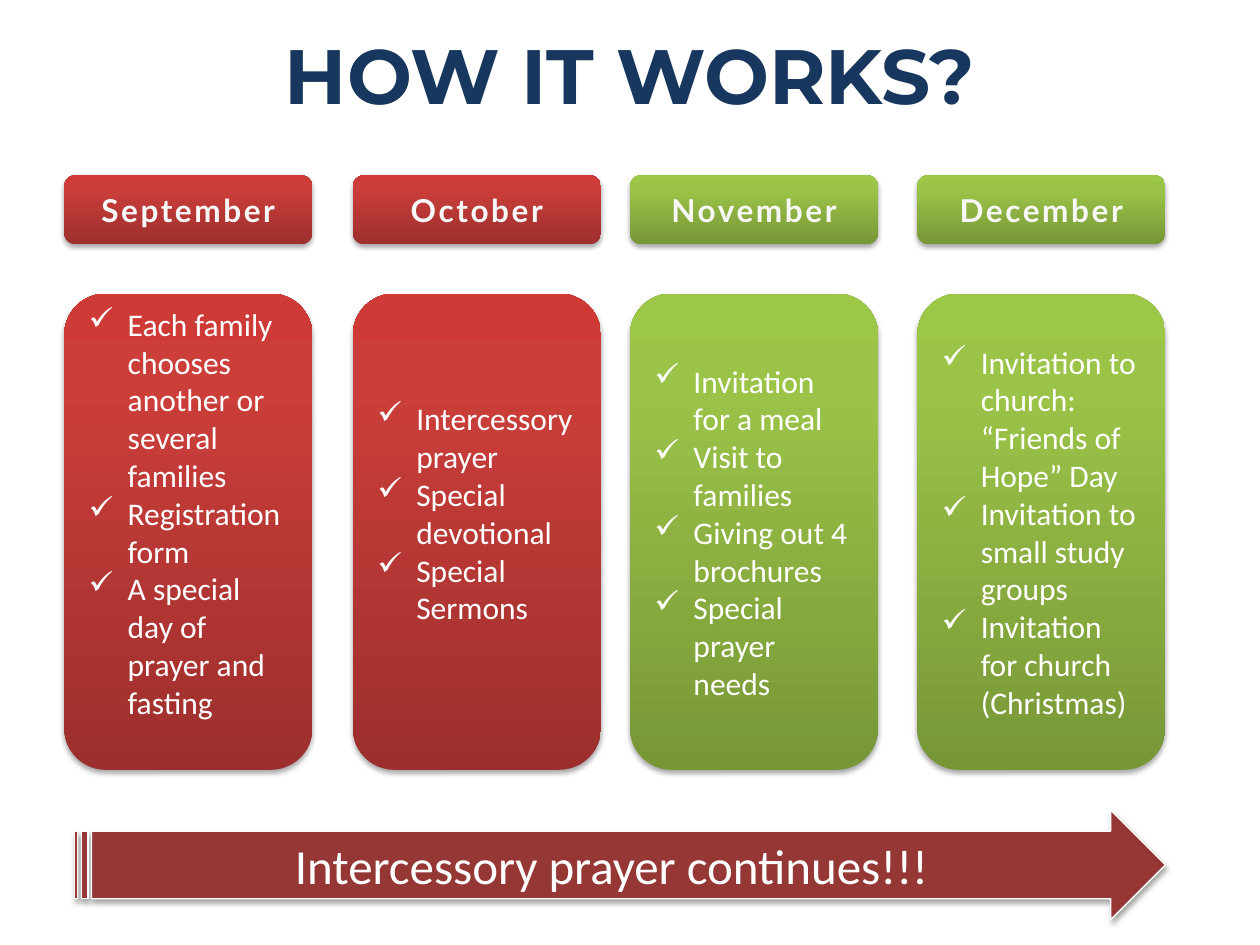
from copy import deepcopy

from pptx import Presentation
from pptx.dml.color import RGBColor
from pptx.enum.shapes import MSO_SHAPE
from pptx.enum.text import MSO_ANCHOR, PP_ALIGN
from pptx.oxml.ns import qn
from pptx.util import Inches, Pt
from lxml import etree

ROUND = MSO_SHAPE.ROUNDED_RECTANGLE
ARROW = MSO_SHAPE.STRIPED_RIGHT_ARROW
MIDDLE = MSO_ANCHOR.MIDDLE
LEFT, CENTER = PP_ALIGN.LEFT, PP_ALIGN.CENTER

NAVY = RGBColor(0x17, 0x37, 0x5E)
WHITE = RGBColor(0xFF, 0xFF, 0xFF)
PALE = RGBColor(0xF8, 0xF8, 0xF8)
BRICK = RGBColor(0x95, 0x37, 0x35)
# Shades from the bottom edge to the top edge
RED = (RGBColor(0x9C, 0x2F, 0x2D), RGBColor(0xCB, 0x3E, 0x3A),
       RGBColor(0xCE, 0x3B, 0x37))
GREEN = (RGBColor(0x77, 0x97, 0x37), RGBColor(0x9B, 0xC3, 0x48),
         RGBColor(0x9D, 0xC7, 0x46))
STOPS = (0, 0.8, 1)

# Left edge, shades, month, tasks, extra room under the tasks
MONTHS = [
    (0.51, RED, "September",
     ["Each family chooses another or several families",
      "Registration form", "A special day of prayer and fasting"], 0.3),
    (2.8, RED, "October",
     ["Intercessory prayer", "Special devotional", "Special Sermons"], 0.3),
    (5, GREEN, "November",
     ["Invitation for a meal", "Visit to families",
      "Giving out 4 brochures", "Special prayer needs"], 0),
    (7.28, GREEN, "December",
     ["Invitation to church: “Friends of Hope” Day",
      "Invitation to small study groups",
      "Invitation for church (Christmas)"], 0),
]


def style(para, text, size, face, color, bold=False, align=CENTER):
    para.text = text
    para.alignment = align
    font = para.font
    font.size, font.name, font.bold = Pt(size), face, bold
    font.color.rgb = color


def add_shade(shape):
    """Give the shape a soft shadow straight below it."""
    shape.shadow.inherit = False
    effects = shape._element.spPr.find(qn("a:effectLst"))
    outer = etree.SubElement(
        effects, qn("a:outerShdw"), blurRad=str(Pt(3.1)), dist=str(Pt(1.8)),
        dir="5400000", rotWithShape="0")
    color = etree.SubElement(outer, qn("a:srgbClr"), val="000000")
    etree.SubElement(color, qn("a:alpha"), val="35000")


def add_box(slide, kind, left, top, width, height):
    shape = slide.shapes.add_shape(
        kind, Inches(left), Inches(top), Inches(width), Inches(height))
    add_shade(shape)
    frame = shape.text_frame
    frame.word_wrap = True
    frame.vertical_anchor = MIDDLE
    return shape


def add_panel(slide, left, top, width, height, shades):
    """Add a rounded box with a three-stop vertical gradient."""
    panel = add_box(slide, ROUND, left, top, width, height)
    panel.line.fill.background()
    fill = panel.fill
    fill.gradient()
    fill.gradient_angle = 90
    stops = panel._element.spPr.find(qn("a:gradFill")).find(qn("a:gsLst"))
    stops.append(deepcopy(stops[-1]))
    for stop, place, shade in zip(fill.gradient_stops, STOPS, shades):
        stop.position = place
        stop.color.rgb = shade
    return panel


def add_check(para):
    """Hang a check mark, drawn in the text font, before the paragraph."""
    props = para._p.get_or_add_pPr()
    props.set("marL", str(Inches(0.31)))
    props.set("indent", str(-Inches(0.31)))
    etree.SubElement(props, qn("a:buFontTx"))
    etree.SubElement(props, qn("a:buChar"), char="✓")


def add_title(slide, left, top, width, height):
    box = slide.shapes.add_textbox(
        Inches(left), Inches(top), Inches(width), Inches(height))
    frame = box.text_frame
    frame.word_wrap = True
    style(frame.paragraphs[0], "HOW IT WORKS?", 44, "Montserrat", NAVY, True)


def add_month(slide, left, top, width, height, shades, name, tasks, room):
    # Month label
    label = add_panel(slide, left, top, width, 0.55, shades)
    para = label.text_frame.paragraphs[0]
    style(para, name, 18, "Lato", PALE, True)
    para.runs[0].font._element.set("spc", "150")

    # Task card
    card = add_panel(slide, left, top + 0.94, width, height - 0.94, shades)
    frame = card.text_frame
    frame.margin_bottom = Inches(0.05 + room)
    for i, task in enumerate(tasks):
        para = frame.add_paragraph() if i else frame.paragraphs[0]
        add_check(para)
        style(para, task, 18, "Calibri", WHITE, align=LEFT)


def add_arrow(slide, left, top, width, height):
    arrow = add_box(slide, ARROW, left, top, width, height)
    arrow.adjustments[0] = 0.616
    arrow.adjustments[1] = 0.5
    arrow.fill.solid()
    arrow.fill.fore_color.rgb = BRICK
    arrow.line.color.rgb = WHITE
    arrow.line.width = Pt(0.75)
    style(arrow.text_frame.paragraphs[0], "Intercessory prayer continues!!!",
          28, "Calibri", WHITE)


def main():
    deck = Presentation()
    deck.slide_width, deck.slide_height = Inches(10), Inches(7.5)
    slide = deck.slides.add_slide(deck.slide_layouts[6])
    add_title(slide, 0, 0.17, 10, 1.01)
    for left, *parts in MONTHS:
        add_month(slide, left, 1.39, 1.97, 4.72, *parts)
    add_arrow(slide, 0.59, 6.43, 8.66, 0.87)
    deck.save("out.pptx")


if __name__ == "__main__":
    main()
